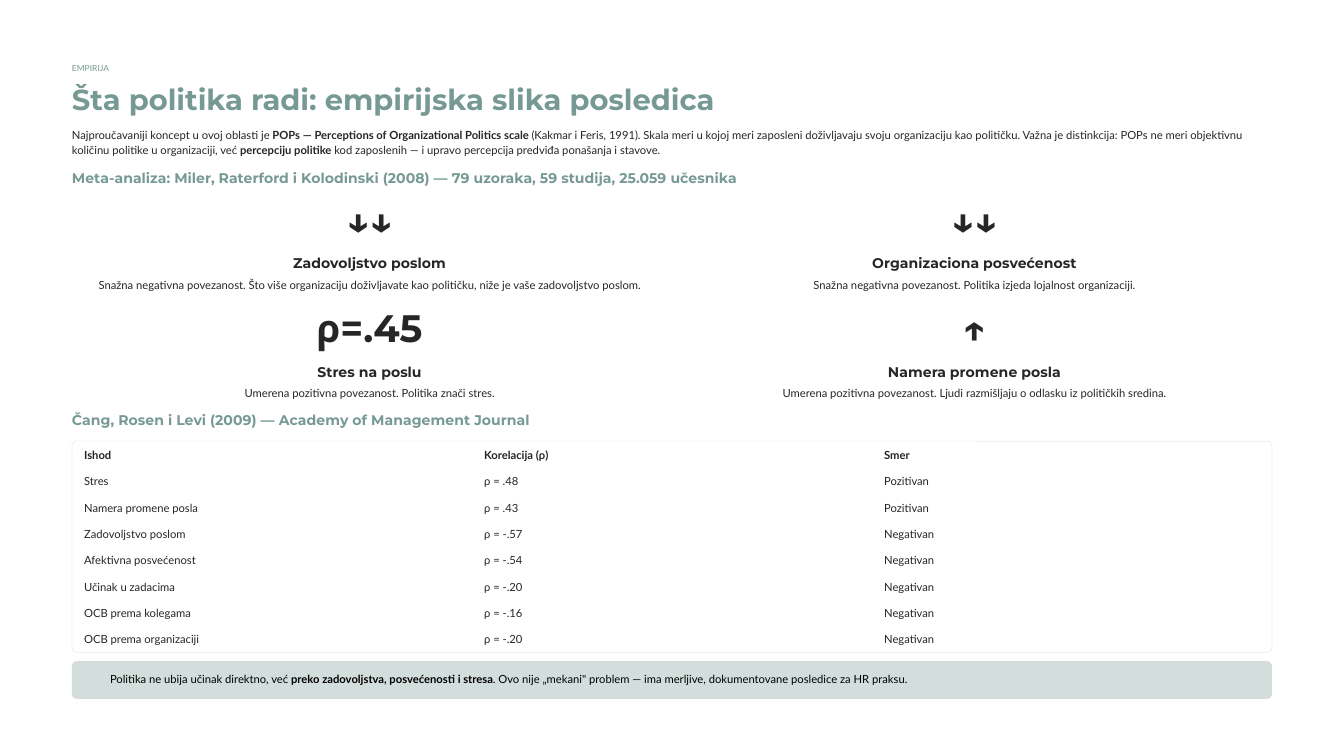
from dataclasses import dataclass
from typing import NamedTuple

from lxml import etree
from pptx import Presentation
from pptx.dml.color import RGBColor
from pptx.enum.shapes import MSO_SHAPE
from pptx.enum.text import MSO_ANCHOR, MSO_AUTO_SIZE, PP_ALIGN
from pptx.oxml.ns import qn
from pptx.util import Cm, Pt


class Box(NamedTuple):
    left: float
    top: float
    width: float
    height: float

    def lengths(self):
        return [Cm(value) for value in self]


class TextStyle(NamedTuple):
    font: str
    size: float
    leading: float
    color: RGBColor
    bold: bool = False


GREEN = RGBColor(0x76, 0x99, 0x93)
INK = RGBColor(0x27, 0x25, 0x25)
BLACK = RGBColor(0, 0, 0)


@dataclass(frozen=True)
class Theme:
    paper = RGBColor(0xFF, 0xFF, 0xFF)
    callout_fill = RGBColor(0xD3, 0xDE, 0xDC)
    frame_line = BLACK
    frame_opacity = 8
    eyebrow = TextStyle("Lato", 4.5, 6.5, GREEN)
    title = TextStyle("Montserrat", 15.5, 19.5, GREEN, True)
    heading = TextStyle("Montserrat", 7.5, 9.5, GREEN, True)
    figure = TextStyle("Montserrat", 20.5, 20.5, INK, True)
    label = TextStyle("Montserrat", 7.5, 9.5, INK, True)
    body = TextStyle("Lato", 6, 8, INK)
    table_head = TextStyle("Lato", 6, 8, INK, True)
    callout = TextStyle("Lato", 6, 8, BLACK)


THEME = Theme()
NO_TABLE_STYLE = "{2D5ABB26-0587-4C30-8999-92F81FD0307C}"
MARGIN = 1.36
CONTENT_WIDTH = 22.68

INTRO = [
    "Najproučavaniji koncept u ovoj oblasti je ",
    "POPs — Perceptions of Organizational Politics scale",
    " (Kakmar i Feris, 1991). Skala meri u kojoj meri zaposleni doživljavaju svoju "
    "organizaciju kao političku. Važna je distinkcija: POPs ne meri objektivnu "
    "količinu politike u organizaciji, već ",
    "percepciju politike",
    " kod zaposlenih — i upravo percepcija predviđa ponašanja i stavove.",
]
FINDINGS = [
    ("↓↓", "Zadovoljstvo poslom", "Snažna negativna povezanost. Što više organizaciju "
     "doživljavate kao političku, niže je vaše zadovoljstvo poslom."),
    ("↓↓", "Organizaciona posvećenost",
     "Snažna negativna povezanost. Politika izjeda lojalnost organizaciji."),
    ("ρ=.45", "Stres na poslu", "Umerena pozitivna povezanost. Politika znači stres."),
    ("↑", "Namera promene posla", "Umerena pozitivna povezanost. "
     "Ljudi razmišljaju o odlasku iz političkih sredina."),
]
CORRELATIONS = [
    ("Ishod", "Korelacija (ρ)", "Smer"),
    ("Stres", "ρ = .48", "Pozitivan"),
    ("Namera promene posla", "ρ = .43", "Pozitivan"),
    ("Zadovoljstvo poslom", "ρ = -.57", "Negativan"),
    ("Afektivna posvećenost", "ρ = -.54", "Negativan"),
    ("Učinak u zadacima", "ρ = -.20", "Negativan"),
    ("OCB prema kolegama", "ρ = -.16", "Negativan"),
    ("OCB prema organizaciji", "ρ = -.20", "Negativan"),
]
CONCLUSION = [
    "Politika ne ubija učinak direktno, već ",
    "preko zadovoljstva, posvećenosti i stresa",
    ". Ovo nije „mekani\" problem — ima merljive, dokumentovane posledice za HR praksu.",
]


def write(frame, content, style, align=PP_ALIGN.LEFT):
    """Fill a text frame; in a list, every second part is bold."""
    para = frame.paragraphs[0]
    if isinstance(content, str):
        para.text = content
    else:
        for part in content:
            para.add_run().text = part
    para.alignment = align
    para.line_spacing = Pt(style.leading)
    for index, span in enumerate(para.runs):
        span.font.name = style.font
        span.font.size = Pt(style.size)
        span.font.bold = style.bold or index % 2 == 1
        span.font.color.rgb = style.color


def clear_insets(frame, wrap):
    frame.margin_left = frame.margin_right = frame.margin_top = frame.margin_bottom = 0
    frame.vertical_anchor = MSO_ANCHOR.TOP
    frame.auto_size = MSO_AUTO_SIZE.NONE
    frame.word_wrap = wrap


def add_text(page, box, content, style, align=PP_ALIGN.LEFT, wrap=False):
    frame = page.shapes.add_textbox(*box.lengths()).text_frame
    clear_insets(frame, wrap)
    write(frame, content, style, align)


def add_panel(page, box, radius):
    panel = page.shapes.add_shape(MSO_SHAPE.ROUNDED_RECTANGLE, *box.lengths())
    panel.shadow.inherit = False
    panel.adjustments[0] = radius
    return panel


def add_header(page, box):
    left, top, width, _ = box
    add_text(page, Box(left, top, 0.69, 0.23), "EMPIRIJA", THEME.eyebrow)
    title = page.shapes.title
    title.left, title.top, title.width, title.height = Box(left, top + 0.36, 12.24, 0.69).lengths()
    clear_insets(title.text_frame, False)
    write(title.text_frame, "Šta politika radi: empirijska slika posledica", THEME.title)
    add_text(page, Box(left, top + 1.24, width, 0.58), INTRO, THEME.body, wrap=True)


def add_finding(page, box, finding):
    figure, label, detail = finding
    left, top, width, _ = box
    inset = 1.97
    inner = width - 2 * inset
    center = PP_ALIGN.CENTER
    add_text(page, Box(left + inset, top, inner, 0.74), figure, THEME.figure, center)
    add_text(page, Box(left + inset, top + 0.95, inner, 0.36), label, THEME.label, center)
    add_text(page, Box(left, top + 1.38, width, 0.28), detail, THEME.body, center)


def add_findings(page, box):
    gap, pitch = 0.18, 2.05
    width = (box.width - gap) / 2
    for index, finding in enumerate(FINDINGS):
        row, column = divmod(index, 2)
        cell = Box(box.left + column * (width + gap), box.top + row * pitch, width, 1.66)
        add_finding(page, cell, finding)


def add_correlations(page, box):
    frame = add_panel(page, box, 0.023)
    frame.fill.background()
    frame.line.width = Pt(0.38)
    frame.line.color.rgb = THEME.frame_line
    color = frame.line._ln.find(".//" + qn("a:srgbClr"))
    etree.SubElement(color, qn("a:alpha"), val=str(THEME.frame_opacity * 1000))

    table = page.shapes.add_table(len(CORRELATIONS), 3, *box.lengths()).table
    table.horz_banding = False
    table._tbl.tblPr.find(qn("a:tableStyleId")).text = NO_TABLE_STYLE
    for column in table.columns:
        column.width = Cm(box.width / 3)
    for row_index, values in enumerate(CORRELATIONS):
        table.rows[row_index].height = Cm(box.height / len(CORRELATIONS))
        style = THEME.body if row_index else THEME.table_head
        for cell, value in zip(table.rows[row_index].cells, values):
            cell.fill.background()
            cell.margin_left = cell.margin_right = Cm(0.23)
            cell.margin_top = cell.margin_bottom = 0
            cell.vertical_anchor = MSO_ANCHOR.MIDDLE
            write(cell.text_frame, value, style)


def add_callout(page, box):
    panel = add_panel(page, box, 0.128)
    panel.fill.solid()
    panel.fill.fore_color.rgb = THEME.callout_fill
    panel.line.fill.background()
    text_box = Box(box.left + 0.72, box.top + 0.19, box.width - 0.94, 0.28)
    add_text(page, text_box, CONCLUSION, THEME.callout)


def main():
    deck = Presentation()
    deck.slide_width, deck.slide_height = Cm(25.4), Cm(14.29)
    page = deck.slides.add_slide(deck.slide_layouts[5])
    page.background.fill.solid()
    page.background.fill.fore_color.rgb = THEME.paper

    add_header(page, Box(MARGIN, 1.15, CONTENT_WIDTH, 1.82))
    add_text(page, Box(MARGIN, 3.18, 12.98, 0.36),
             "Meta-analiza: Miler, Raterford i Kolodinski (2008) — "
             "79 uzoraka, 59 studija, 25.059 učesnika", THEME.heading)
    add_findings(page, Box(MARGIN, 3.85, CONTENT_WIDTH, 3.71))
    add_text(page, Box(MARGIN, 7.77, 8.94, 0.36),
             "Čang, Rosen i Levi (2009) — Academy of Management Journal", THEME.heading)
    add_correlations(page, Box(MARGIN, 8.34, CONTENT_WIDTH, 3.99))
    add_callout(page, Box(MARGIN, 12.5, CONTENT_WIDTH, 0.71))
    deck.save("out.pptx")


if __name__ == "__main__":
    main()
